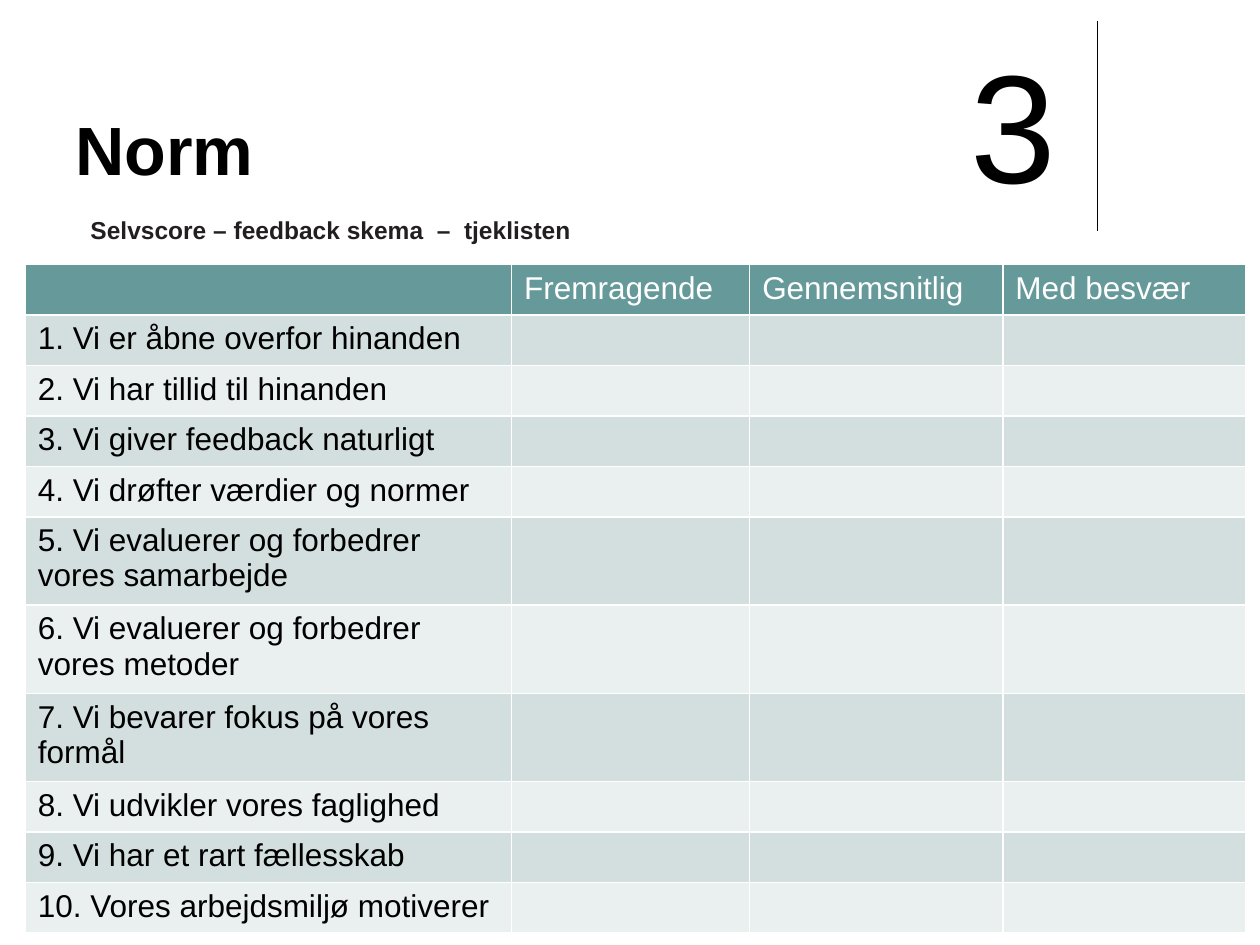
import pptx
import pptx.util
import pptx.dml.color
import pptx.enum.shapes
import pptx.enum.text
import pptx.oxml
import pptx.oxml.ns

COLORS = {"ink": "000000", "subtitle": "231F20", "paper": "FFFFFF",
          "header": "669999", "odd": "D3DEDE", "even": "EAEFEF"}
SLIDE_WIDTH = pptx.util.Inches(10)
SLIDE_HEIGHT = pptx.util.Inches(7.5)
COLUMN = SLIDE_WIDTH / 100
ROW = SLIDE_HEIGHT / 75
ANCHOR = pptx.enum.text.MSO_ANCHOR

RATINGS = ["", "Fremragende", "Gennemsnitlig", "Med besvær"]
NORMS = [
    "Vi er åbne overfor hinanden",
    "Vi har tillid til hinanden",
    "Vi giver feedback naturligt",
    "Vi drøfter værdier og normer",
    "Vi evaluerer og forbedrer vores samarbejde",
    "Vi evaluerer og forbedrer vores metoder",
    "Vi bevarer fokus på vores formål",
    "Vi udvikler vores faglighed",
    "Vi har et rart fællesskab",
    "Vores arbejdsmiljø motiverer",
]


def columns(count):
    """Return the length of a number of grid columns."""
    return pptx.util.Emu(round(count * COLUMN))


def rows(count):
    """Return the length of a number of grid rows."""
    return pptx.util.Emu(round(count * ROW))


def place(box):
    """Turn a box in grid units into slide lengths."""
    left, top, width, height = box
    return columns(left), rows(top), columns(width), rows(height)


def rgb(name):
    """Look up a named colour."""
    return pptx.dml.color.RGBColor.from_string(COLORS[name])


def format_text(paragraph, text, color, **font_values):
    """Write one run and apply its font values."""
    run = paragraph.add_run()
    run.text = text
    for attribute, value in {"name": "Arial", **font_values}.items():
        setattr(run.font, attribute, value)
    run.font.color.rgb = rgb(color)


def add_text(slide, box, text, color, frame_values, **font_values):
    """Add a text box holding one paragraph."""
    frame = slide.shapes.add_textbox(*place(box)).text_frame
    for attribute, value in frame_values.items():
        setattr(frame, attribute, value)
    format_text(frame.paragraphs[0], text, color, **font_values)


def add_heading(slide, box):
    """Place the title, subtitle, number and rule within the heading box."""
    left, top, width, height = box
    add_text(slide, (left, top, width, 14.2), "Norm", "ink",
             {"word_wrap": True, "vertical_anchor": ANCHOR.BOTTOM},
             size=pptx.util.Pt(39), bold=True)
    add_text(slide, (left + 1.2, top + 15.1, 40.3, 4),
             "Selvscore – feedback skema  –  tjeklisten", "subtitle",
             {"word_wrap": False, "margin_top": rows(0.7)},
             size=pptx.util.Pt(14), bold=True)
    add_text(slide, (left + 71, top, 8.9, 15.8), "3", "ink",
             {"word_wrap": False, "vertical_anchor": ANCHOR.BOTTOM,
              "margin_bottom": rows(0.1)},
             size=pptx.util.Pt(88))
    rule_left = columns(left + width - 0.4)
    rule = slide.shapes.add_connector(
        pptx.enum.shapes.MSO_CONNECTOR.STRAIGHT,
        rule_left, rows(top + 0.4), rule_left, rows(top + height))
    rule.line.color.rgb = rgb("ink")
    rule.line.width = pptx.util.Pt(0.75)
    pptx.oxml.ns.qn("a:effectLst")
    rule._element.spPr.append(pptx.oxml.parse_xml(
        f'<a:effectLst {pptx.oxml.ns.nsdecls("a")}/>'))


def add_borders(cell, color, width):
    """Draw all four borders of a cell."""
    properties = cell._tc.get_or_add_tcPr()
    for index, side in enumerate(("lnL", "lnR", "lnT", "lnB")):
        properties.insert(index, pptx.oxml.parse_xml(
            f'<a:{side} {pptx.oxml.ns.nsdecls("a")} w="{width}"><a:solidFill>'
            f'<a:srgbClr val="{COLORS[color]}"/></a:solidFill></a:{side}>'))


def add_score_table(slide, box, column_widths):
    """Place the self-score table with alternating row fills."""
    records = [RATINGS] + [[f"{number}. {norm}", "", "", ""]
                           for number, norm in enumerate(NORMS, 1)]
    table = slide.shapes.add_table(
        len(records), len(RATINGS), *place(box)).table
    for column, width in zip(table.columns, column_widths):
        column.width = columns(width)
    for row_index, record in enumerate(records):
        table.rows[row_index].height = rows(box[3] / len(records))
        fill = ("odd" if row_index % 2 else "even") if row_index else "header"
        for column_index, text in enumerate(record):
            cell = table.cell(row_index, column_index)
            cell.fill.solid()
            cell.fill.fore_color.rgb = rgb(fill)
            add_borders(cell, "paper", pptx.util.Pt(1))
            paragraph = cell.text_frame.paragraphs[0]
            paragraph.font.size = pptx.util.Pt(18)
            if text:
                format_text(paragraph, text, "ink" if row_index else "paper",
                            size=pptx.util.Pt(18), bold=False)


def main():
    """Build the slide and save it."""
    presentation = pptx.Presentation()
    presentation.slide_width = SLIDE_WIDTH
    presentation.slide_height = SLIDE_HEIGHT
    slide = presentation.slides.add_slide(presentation.slide_layouts[6])
    slide.background.fill.solid()
    slide.background.fill.fore_color.rgb = rgb("paper")
    add_heading(slide, (5, 1.3, 82.5, 17))
    add_score_table(slide, (2, 21, 96.9, 44), (38.6, 18.9, 20.1, 19.3))
    presentation.save("out.pptx")


if __name__ == "__main__":
    main()
